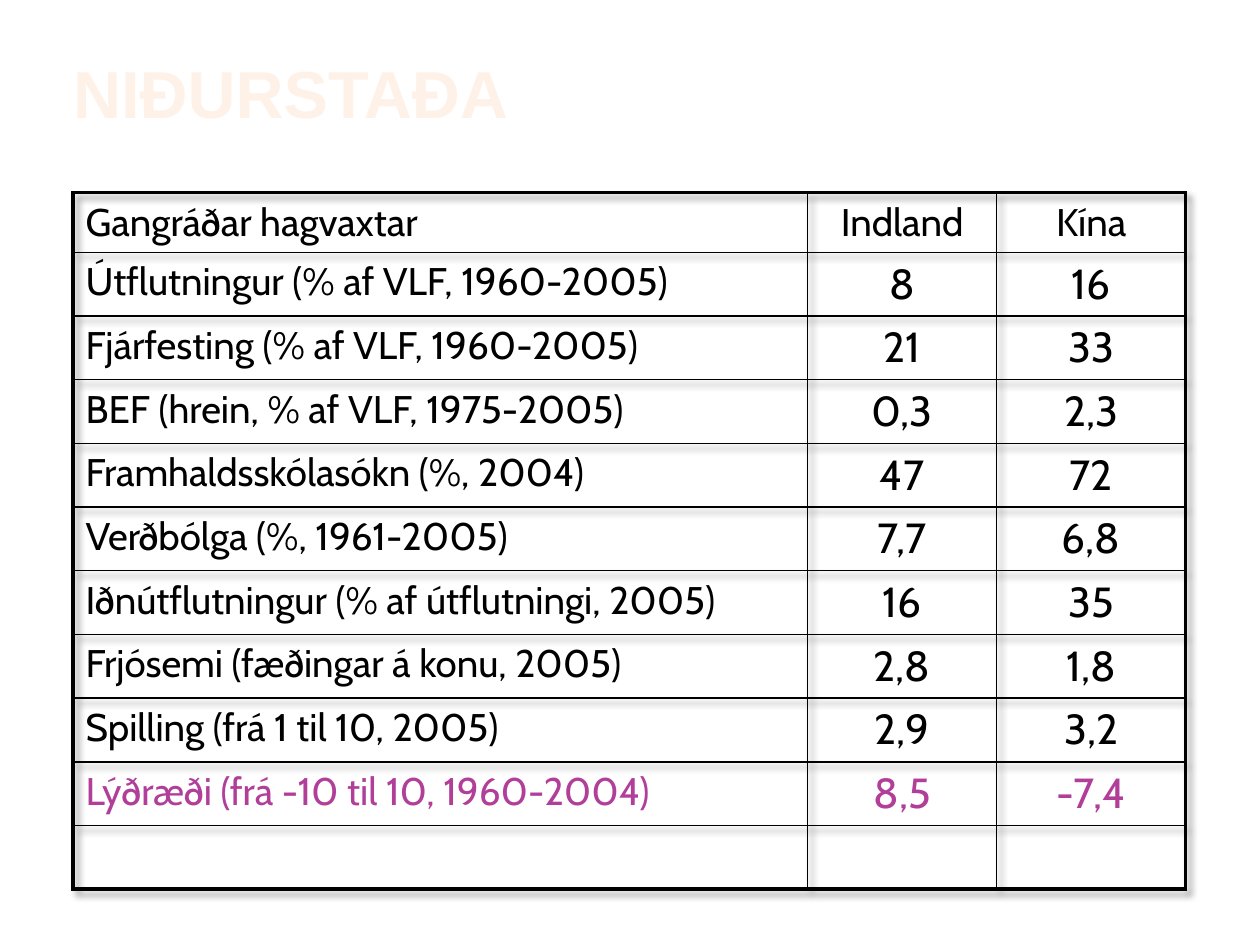
from lxml import etree
from pptx import Presentation
from pptx.dml.color import RGBColor
from pptx.enum.text import MSO_ANCHOR, PP_ALIGN
from pptx.oxml import parse_xml
from pptx.oxml.ns import qn
from pptx.util import Inches, Pt

TITLE = "NIÐURSTAÐA"
ROWS = [
    ("Gangráðar hagvaxtar", "Indland", "Kína"),
    ("Útflutningur (% af VLF, 1960-2005)", "8", "16"),
    ("Fjárfesting (% af VLF, 1960-2005)", "21", "33"),
    ("BEF (hrein, % af VLF, 1975-2005)", "0,3", "2,3"),
    ("Framhaldsskólasókn (%, 2004)", "47", "72"),
    ("Verðbólga (%, 1961-2005)", "7,7", "6,8"),
    ("Iðnútflutningur (% af útflutningi, 2005)", "16", "35"),
    ("Frjósemi (fæðingar á konu, 2005)", "2,8", "1,8"),
    ("Spilling (frá 1 til 10, 2005)", "2,9", "3,2"),
    ("Lýðræði (frá -10 til 10, 1960-2004)", "8,5", "-7,4"),
    ("", "", ""),
]
COL_WIDTHS = (5.83, 1.5, 1.5)
HEADER_HEIGHT, ROW_HEIGHT = 0.47, 0.5
HIGHLIGHT_ROW = 9
BLACK, PURPLE, CREAM = "000000", "B13F9A", "FEF2E8"
THIN, THICK = 1, 2.25
NO_STYLE = "{2D5ABB26-0587-4C30-8999-92F81FD0307C}"
SHADOW = (
    '<a:effectLst xmlns:a="http://schemas.openxmlformats.org/drawingml/2006/main">'
    '<a:outerShdw blurRad="50800" dist="50800" dir="2700000">'
    '<a:srgbClr val="000000"><a:alpha val="40000"/></a:srgbClr>'
    '</a:outerShdw></a:effectLst>'
)


def set_font(p, name, size, color, bold=False):
    p.font.name = name
    p.font.size = Pt(size)
    p.font.bold = bold
    p.font.color.rgb = RGBColor.from_string(color)


def set_borders(cell, widths):
    """Draw black cell borders; widths are left, right, top, bottom in points."""
    tc_pr = cell._tc.get_or_add_tcPr()
    for i, (tag, width) in enumerate(zip(("a:lnL", "a:lnR", "a:lnT", "a:lnB"), widths)):
        ln = etree.Element(qn(tag), w=str(Pt(width)))
        fill = etree.SubElement(ln, qn("a:solidFill"))
        etree.SubElement(fill, qn("a:srgbClr"), val=BLACK)
        tc_pr.insert(i, ln)


def add_title(s):
    title = s.shapes.title
    title.left, title.top = Inches(0.58), Inches(0.3)
    title.width, title.height = Inches(8.83), Inches(0.75)
    tf = title.text_frame
    tf.margin_left = tf.margin_right = tf.margin_top = tf.margin_bottom = 0
    tf.vertical_anchor = MSO_ANCHOR.BOTTOM
    p = tf.paragraphs[0]
    p.text = TITLE
    p.alignment = PP_ALIGN.LEFT
    set_font(p, "Arial", 38, CREAM, bold=True)


def add_growth_table(s):
    last_row, last_col = len(ROWS) - 1, len(COL_WIDTHS) - 1
    height = HEADER_HEIGHT + ROW_HEIGHT * last_row
    table = s.shapes.add_table(
        len(ROWS), len(COL_WIDTHS), Inches(0.58), Inches(1.53),
        Inches(sum(COL_WIDTHS)), Inches(height)).table
    table.first_row = table.horz_banding = False
    tbl_pr = table._tbl.tblPr
    tbl_pr.find(qn("a:tableStyleId")).text = NO_STYLE
    tbl_pr.insert(0, parse_xml(SHADOW))
    for column, width in zip(table.columns, COL_WIDTHS):
        column.width = Inches(width)
    for r, values in enumerate(ROWS):
        table.rows[r].height = Inches(ROW_HEIGHT if r else HEADER_HEIGHT)
        for c, value in enumerate(values):
            cell = table.cell(r, c)
            cell.fill.background()
            at_edge = (c == 0, c == last_col, r == 0, r == last_row)
            set_borders(cell, [THICK if edge else THIN for edge in at_edge])
            p = cell.text_frame.paragraphs[0]
            p.text = value
            p.alignment = PP_ALIGN.CENTER if c else PP_ALIGN.LEFT
            size = 24 if r and c else 22
            set_font(p, "Cabin", size, PURPLE if r == HIGHLIGHT_ROW else BLACK)


def main():
    prs = Presentation()
    prs.slide_width, prs.slide_height = Inches(10), Inches(7.5)
    s = prs.slides.add_slide(prs.slide_layouts[5])
    add_title(s)
    add_growth_table(s)
    prs.save("out.pptx")


if __name__ == "__main__":
    main()
